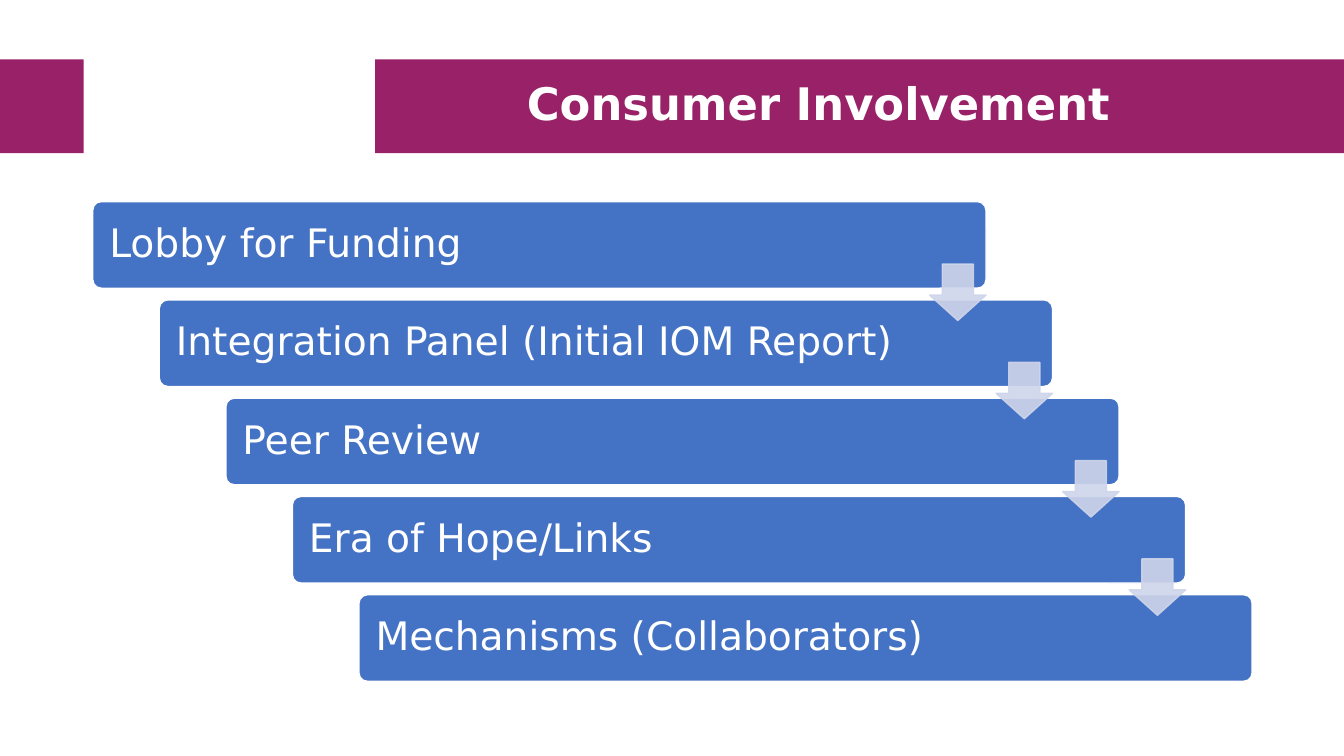
import pptx
import pptx.util
import pptx.dml.color
import pptx.enum.shapes
import pptx.enum.text
import pptx.oxml.ns
from lxml import etree

MSO = pptx.enum.shapes.MSO_SHAPE
STEP_X, STEP_Y = 0.66, 0.975
BAR_X, BAR_Y, BAR_W, BAR_H = 0.92, 2, 8.86, 0.86
ARROW = 0.56
BANNER_Y, BANNER_H = 0.59, 0.93
STEPS = [
    "Lobby for Funding",
    "Integration Panel (Initial IOM Report)",
    "Peer Review",
    "Era of Hope/Links",
    "Mechanisms (Collaborators)",
]

prs = pptx.Presentation()
prs.slide_width = pptx.util.Inches(13.33)
prs.slide_height = pptx.util.Inches(7.5)
s = prs.slides.add_slide(prs.slide_layouts[6])


def add_block(kind, x, y, w, h, fill, line=None, alpha=None):
    """Add a flat shape in inches; alpha is the opacity in percent."""
    sp = s.shapes.add_shape(kind, *map(pptx.util.Inches, (x, y, w, h)))
    sp.shadow.inherit = False
    sp.fill.solid()
    sp.fill.fore_color.rgb = pptx.dml.color.RGBColor.from_string(fill)
    if line:
        sp.line.width = pptx.util.Pt(1)
        sp.line.color.rgb = pptx.dml.color.RGBColor.from_string(line)
    else:
        sp.line.fill.background()
    if alpha:
        for clr in sp._element.spPr.iter(pptx.oxml.ns.qn("a:srgbClr")):
            etree.SubElement(clr, pptx.oxml.ns.qn("a:alpha"), val=str(alpha * 1000))
    return sp


def write(sp, text, size, align, inset, bold=False):
    """Put one white line of text in a shape, centred vertically."""
    tf = sp.text_frame
    tf.word_wrap = True
    tf.vertical_anchor = pptx.enum.text.MSO_ANCHOR.MIDDLE
    tf.margin_left = tf.margin_right = pptx.util.Inches(inset)
    p = tf.paragraphs[0]
    p.alignment = align
    p.line_spacing = 0.9
    r = p.add_run()
    r.text = text
    r.font.name = "DejaVu Sans"
    r.font.size = pptx.util.Pt(size)
    r.font.bold = bold
    r.font.color.rgb = pptx.dml.color.RGBColor.from_string("FFFFFF")


# Title banner
for x, w in [(3.72, 9.61), (0, 0.83)]:
    add_block(MSO.RECTANGLE, x, BANNER_Y, w, BANNER_H, "982168")
title = s.shapes.add_textbox(*map(pptx.util.Inches, (3.92, 0.68, 8.4, 0.75)))
write(title, "Consumer Involvement", 32, pptx.enum.text.PP_ALIGN.CENTER, 0.1, bold=True)

# Staircase of steps
for i, step in enumerate(STEPS):
    bar = add_block(MSO.ROUNDED_RECTANGLE, BAR_X + i * STEP_X, BAR_Y + i * STEP_Y,
                    BAR_W, BAR_H, "4472C4", "FFFFFF")
    bar.adjustments[0] = 0.1
    write(bar, step, 28, pptx.enum.text.PP_ALIGN.LEFT, 0.14)

# Arrows from each step to the next
for i in range(len(STEPS) - 1):
    arrow = add_block(MSO.DOWN_ARROW, BAR_X + BAR_W - ARROW + i * STEP_X,
                      2.62 + i * STEP_Y, ARROW, ARROW, "CFD5EA", "CFD5EA", alpha=90)
    arrow.adjustments[0] = 0.45
    arrow.adjustments[1] = 0.55
    # The shaft takes 55% of the width, the head 45% of the height
    arrow.adjustments[0], arrow.adjustments[1] = 0.55, 0.45

prs.save("out.pptx")
